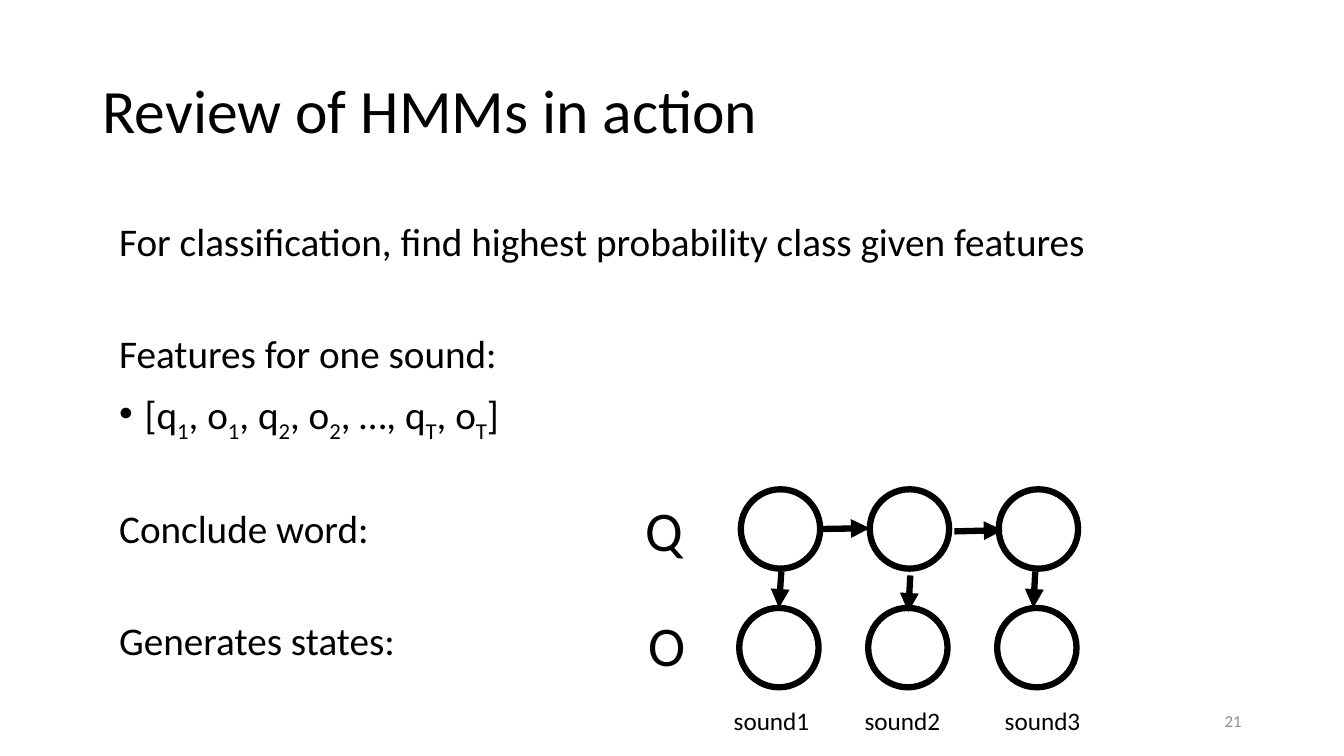
from lxml.etree import SubElement
from pptx import Presentation
from pptx.dml.color import RGBColor
from pptx.enum.shapes import MSO_CONNECTOR, MSO_SHAPE
from pptx.enum.text import MSO_ANCHOR, MSO_AUTO_SIZE, PP_ALIGN
from pptx.oxml.ns import qn
from pptx.util import Cm, Pt

COLORS = {"ink": "000000", "page_number": "8C8C8C"}
FONT = "Calibri"
LINE_WIDTH = Pt(4.5)

CIRCLE_SIZE = 2
CIRCLE_PITCH = 3.25
# Left and top of the first circle in each row
CIRCLE_ROWS = [(18.67, 12.33), (18.63, 15.32)]
# Start and end points
ARROWS = [
    (20.68, 13.33, 21.92, 13.31),
    (24.05, 13.39, 25.27, 13.36),
    (19.69, 14.4, 19.63, 15.32),
    (22.94, 14.5, 22.89, 15.42),
    (26.09, 14.4, 26.04, 15.32),
]

GAP, STEP = 50, 10
# Text, space before in points, bulleted; "_" puts the next letter in subscript
BODY = [
    ("For classification, find highest probability class given features", 0, False),
    ("Features for one sound:", GAP, False),
    ("[q_1, o_1, q_2, o_2, …, q_T, o_T]", STEP, True),
    ("Conclude word:", GAP, False),
    ("Generates states:", GAP, False),
]


def color(name):
    return RGBColor.from_string(COLORS[name])


def format_paragraph(paragraph, size, color_name="ink"):
    paragraph.font.name = FONT
    paragraph.font.size = Pt(size)
    paragraph.font.color.rgb = color(color_name)


def place(shape, left, top, width, height):
    shape.left, shape.top = Cm(left), Cm(top)
    shape.width, shape.height = Cm(width), Cm(height)


def set_bullet(paragraph, bulleted):
    properties = paragraph._p.get_or_add_pPr()
    indent = Cm(0.64) if bulleted else 0
    properties.set("marL", str(indent))
    properties.set("indent", str(-indent))
    if bulleted:
        SubElement(properties, qn("a:buFont"), typeface="Arial")
        SubElement(properties, qn("a:buChar"), char="•")
    else:
        SubElement(properties, qn("a:buNone"))


def add_subscripted_text(paragraph, text):
    first, *rest = text.split("_")
    paragraph.add_run().text = first
    for part in rest:
        subscript = paragraph.add_run()
        subscript.text = part[0]
        subscript._r.get_or_add_rPr().set("baseline", "-25000")
        paragraph.add_run().text = part[1:]


def fill_title(title):
    place(title, 2.33, 1.01, 29.21, 3.68)
    frame = title.text_frame
    frame.text = "Review of HMMs in action"
    frame.vertical_anchor = MSO_ANCHOR.MIDDLE
    paragraph = frame.paragraphs[0]
    paragraph.alignment = PP_ALIGN.LEFT
    paragraph.line_spacing = 0.9
    format_paragraph(paragraph, 44)


def fill_body(body):
    place(body, 2.75, 5.48, 29.21, 11.33)
    frame = body.text_frame
    frame.auto_size = MSO_AUTO_SIZE.NONE
    for index, (text, space_before, bulleted) in enumerate(BODY):
        paragraph = frame.add_paragraph() if index else frame.paragraphs[0]
        set_bullet(paragraph, bulleted)
        paragraph.line_spacing = 0.9
        paragraph.space_before = Pt(space_before)
        add_subscripted_text(paragraph, text)
        format_paragraph(paragraph, 28)


def add_label(slide, text, left, top, width, height, size, wrap=True,
              color_name="ink", alignment=PP_ALIGN.LEFT, anchor=MSO_ANCHOR.TOP):
    frame = slide.shapes.add_textbox(Cm(left), Cm(top), Cm(width), Cm(height)).text_frame
    frame.text = text
    frame.word_wrap = wrap
    frame.vertical_anchor = anchor
    paragraph = frame.paragraphs[0]
    paragraph.alignment = alignment
    format_paragraph(paragraph, size, color_name)


def add_circle(slide, left, top):
    circle = slide.shapes.add_shape(
        MSO_SHAPE.OVAL, Cm(left), Cm(top), Cm(CIRCLE_SIZE), Cm(CIRCLE_SIZE))
    circle.shadow.inherit = False
    circle.fill.background()
    circle.line.color.rgb = color("ink")
    circle.line.width = LINE_WIDTH


def add_arrow(slide, *points):
    arrow = slide.shapes.add_connector(
        MSO_CONNECTOR.STRAIGHT, *(Cm(point) for point in points))
    arrow.line.color.rgb = color("ink")
    arrow.line.width = LINE_WIDTH
    SubElement(arrow.line._get_or_add_ln(), qn("a:tailEnd"), type="triangle")
    SubElement(arrow._element.spPr, qn("a:effectLst"))


def main():
    presentation = Presentation()
    presentation.slide_width, presentation.slide_height = Cm(33.87), Cm(19.05)
    slide = presentation.slides.add_slide(presentation.slide_layouts[1])

    # Title, list and page number
    fill_title(slide.shapes.title)
    fill_body(slide.placeholders[1])
    add_label(slide, "21", 23.92, 17.65, 7.62, 1.01, 12, color_name="page_number",
              alignment=PP_ALIGN.RIGHT, anchor=MSO_ANCHOR.MIDDLE)

    # Hidden Markov model: states above, observations below
    for left, top in CIRCLE_ROWS:
        for column in range(3):
            add_circle(slide, left + column * CIRCLE_PITCH, top)
    for points in ARROWS:
        add_arrow(slide, *points)

    # Row and column labels
    add_label(slide, "Q", 16.03, 12.37, 1.47, 1.96, 40, wrap=False)
    add_label(slide, "O", 16.1, 15.27, 1.47, 1.96, 40, wrap=False)
    for number, left in enumerate((18.24, 21.54, 25.07), start=1):
        add_label(slide, f"sound{number}", left, 17.65, 2.82, 1.02, 18)

    presentation.save("out.pptx")


if __name__ == "__main__":
    main()
